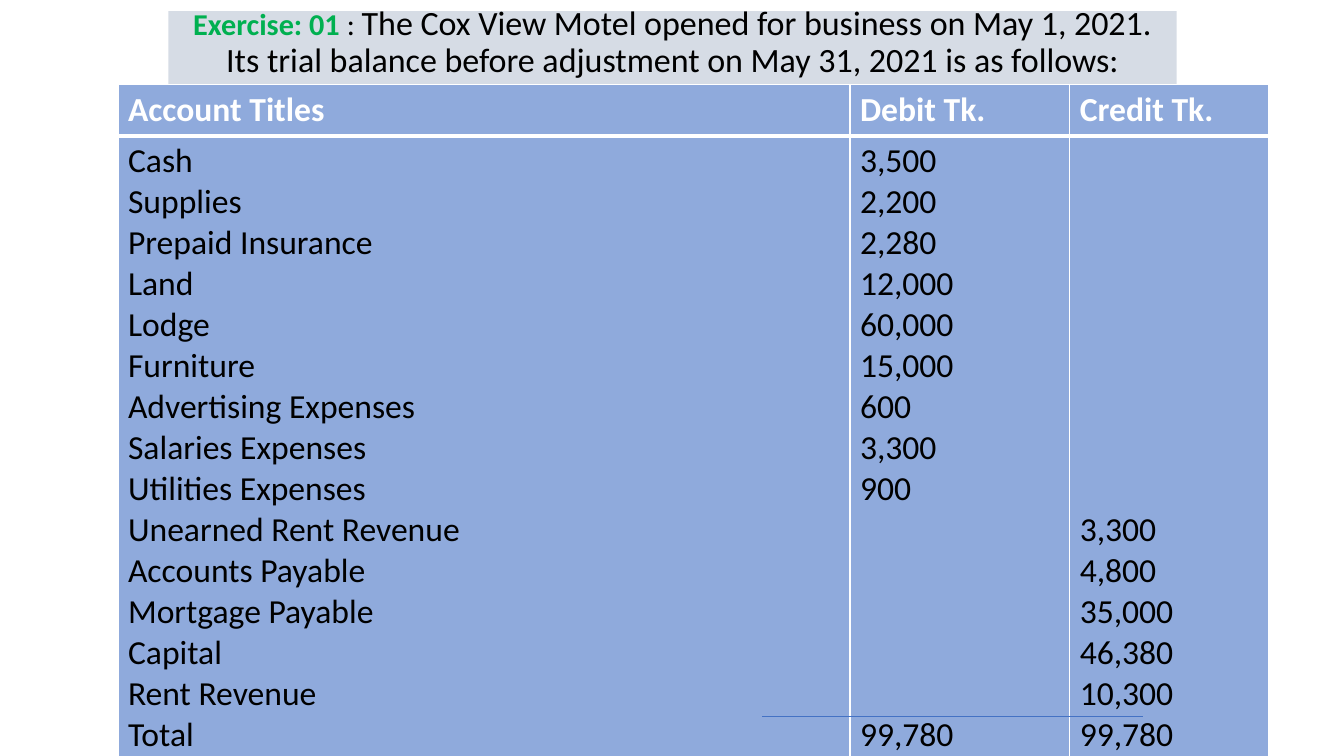
from lxml.etree import SubElement
from pptx import Presentation
from pptx.dml.color import RGBColor
from pptx.enum.shapes import MSO_CONNECTOR as Connector, MSO_SHAPE as Shape
from pptx.enum.text import MSO_ANCHOR as Anchor, PP_ALIGN as Align
from pptx.oxml.ns import qn
from pptx.util import Inches, Pt

BLACK = RGBColor(0x00, 0x00, 0x00)
WHITE = RGBColor(0xFF, 0xFF, 0xFF)
GREEN = RGBColor(0x00, 0xB0, 0x50)
PALE_GREY = RGBColor(0xD6, 0xDC, 0xE5)
TABLE_BLUE = RGBColor(0x8F, 0xAA, 0xDC)
RULE_BLUE = RGBColor(0x44, 0x72, 0xC4)

TABLE_SIZE = 24
LINE_HEIGHT = 29.3  # points taken by one table line

HEADINGS = ["Account Titles", "Debit Tk.", "Credit Tk."]
DEBITS = [
    ("Cash", "3,500"),
    ("Supplies", "2,200"),
    ("Prepaid Insurance", "2,280"),
    ("Land", "12,000"),
    ("Lodge", "60,000"),
    ("Furniture", "15,000"),
    ("Advertising Expenses", "600"),
    ("Salaries Expenses", "3,300"),
    ("Utilities Expenses", "900"),
]
CREDITS = [
    ("Unearned Rent Revenue", "3,300"),
    ("Accounts Payable", "4,800"),
    ("Mortgage Payable", "35,000"),
    ("Capital", "46,380"),
    ("Rent Revenue", "10,300"),
]
TOTAL = "99,780"


class Page:
    font = "Calibri"

    def __init__(self, deck):
        self.shapes = deck.slides.add_slide(deck.slide_layouts[6]).shapes

    def add_span(self, para, text, size, color, bold=False):
        span = para.add_run()
        span.text = text
        span.font.color.rgb = color
        style = {"name": self.font, "size": Pt(size), "bold": bold}
        for name, value in style.items():
            setattr(span.font, name, value)

    def add_title(self, left, top, width, height, spans):
        box = self.shapes.add_shape(
            Shape.RECTANGLE, *map(Inches, (left, top, width, height)))
        box.shadow.inherit = False
        box.fill.solid()
        box.fill.fore_color.rgb = PALE_GREY
        box.line.fill.background()
        frame = box.text_frame
        frame.word_wrap = True
        frame.vertical_anchor = Anchor.BOTTOM
        para = frame.paragraphs[0]
        para.alignment = Align.CENTER
        para.line_spacing = 0.9
        for span in spans:
            self.add_span(para, *span)

    def add_table(self, left, top, widths, heights):
        table = self.shapes.add_table(
            len(heights), len(widths), Inches(left), Inches(top),
            Inches(sum(widths)), Inches(sum(heights))).table
        for column, width in zip(table.columns, widths):
            column.width = Inches(width)
        for row, height in zip(table.rows, heights):
            row.height = Inches(height)
        return table

    def fill_cell(self, cell, lines, color, bold=False, gaps=None):
        """Write one paragraph per line; gaps maps a line index to skipped lines."""
        gaps = gaps or {}
        cell.margin_top = Inches(0.05) + Pt(LINE_HEIGHT * gaps.get(0, 0))
        frame = cell.text_frame
        for index, text in enumerate(lines):
            para = frame.add_paragraph() if index else frame.paragraphs[0]
            if index in gaps and index:
                para.space_before = Pt(LINE_HEIGHT * gaps[index])
            self.add_span(para, text, TABLE_SIZE, color, bold)

    def paint_cell(self, cell, bottom=1, top=1):
        """Set white borders, with widths in points, and the blue fill."""
        properties = cell._tc.get_or_add_tcPr()
        for side, width in {"L": 1, "R": 1, "T": top, "B": bottom}.items():
            border = SubElement(properties, qn(f"a:ln{side}"), w=str(Pt(width)))
            paint = SubElement(border, qn("a:solidFill"))
            SubElement(paint, qn("a:srgbClr"), val=str(WHITE))
        cell.fill.solid()
        cell.fill.fore_color.rgb = TABLE_BLUE

    def add_rule(self, left, right, y):
        rule = self.shapes.add_connector(
            Connector.STRAIGHT, *map(Inches, (left, y, right, y)))
        rule.line.color.rgb = RULE_BLUE
        rule.line.width = Pt(0.5)
        SubElement(rule._element.spPr, qn("a:effectLst"))


def main():
    deck = Presentation()
    deck.slide_width, deck.slide_height = Inches(13.33), Inches(7.5)
    page = Page(deck)

    page.add_title(1.67, 0.11, 10, 0.73, [
        ("Exercise: 01 ", 21.6, GREEN, True),
        (": ", 21.6, BLACK),
        ("The Cox View Motel opened for business on May 1, 2021. Its trial "
         "balance before adjustment on May 31, 2021 is as follows:", 24.3, BLACK),
    ])

    table = page.add_table(1.17, 0.84, [7.26, 2.18, 1.97], [0.46, 6.31])
    titles = [title for title, amount in DEBITS + CREDITS] + ["Total"]
    debits = [amount for title, amount in DEBITS] + [TOTAL]
    credits = [amount for title, amount in CREDITS] + [TOTAL]
    columns = [
        (titles, {}),
        (debits, {len(DEBITS): len(CREDITS)}),
        (credits, {0: len(DEBITS)}),
    ]
    for index, (heading, (lines, gaps)) in enumerate(zip(HEADINGS, columns)):
        header, body = table.cell(0, index), table.cell(1, index)
        page.fill_cell(header, [heading], WHITE, bold=True)
        page.paint_cell(header, bottom=3)
        page.fill_cell(body, lines, BLACK, gaps=gaps)
        page.paint_cell(body, top=3)

    page.add_rule(7.56, 11.34, 7.11)
    deck.save("out.pptx")


if __name__ == "__main__":
    main()
